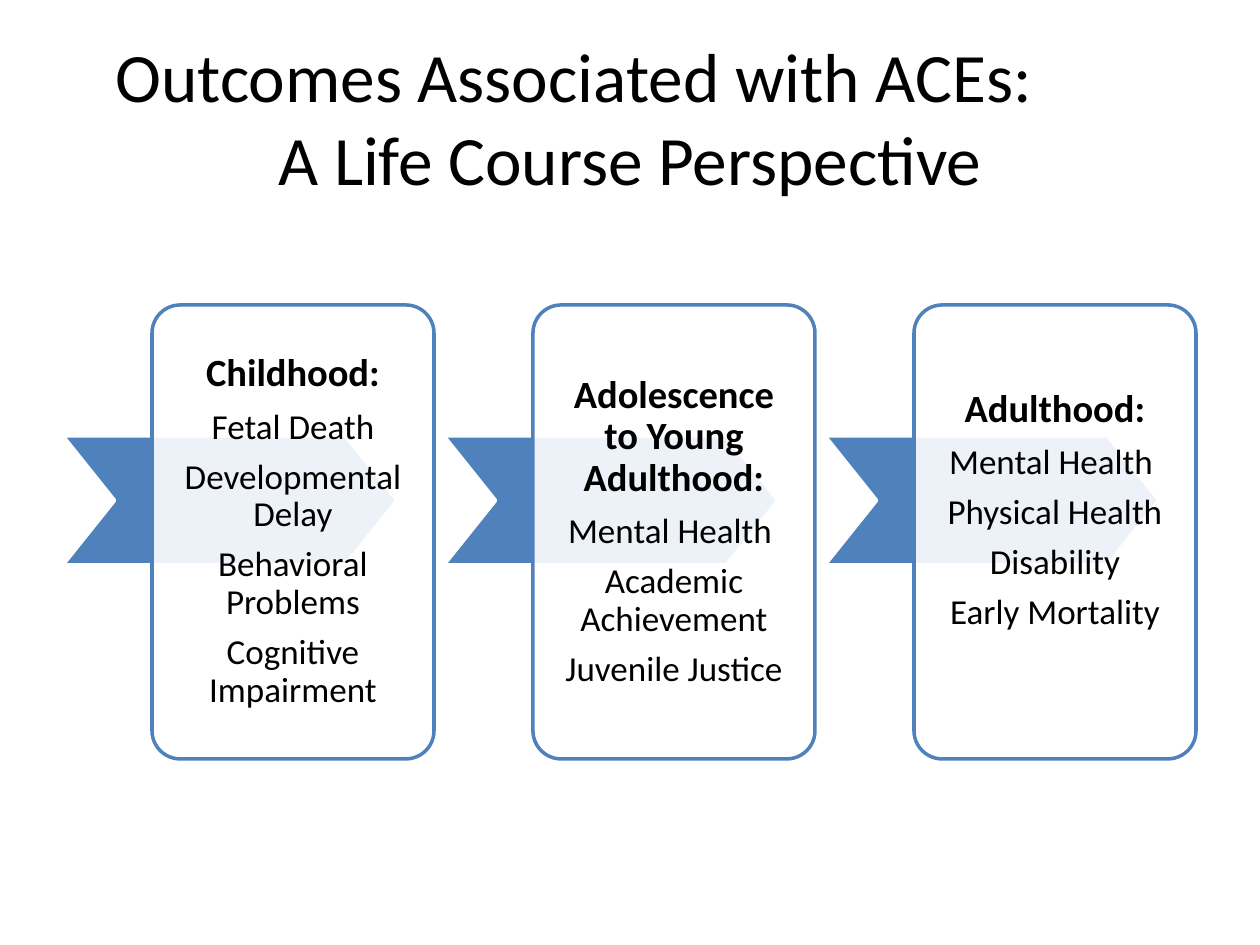
import dataclasses

import pptx
import pptx.dml.color
import pptx.enum.shapes
import pptx.enum.text
import pptx.oxml.ns
import pptx.util
from lxml import etree

SCALE = 914400 // 126  # EMU in one px


@dataclasses.dataclass(frozen=True)
class Theme:
    font: str = "Calibri"
    ink: str = "000000"
    paper: str = "FFFFFF"
    blue: str = "4F81BD"
    title: float = 39.6
    head: int = 22
    body: int = 20
    line: int = 2


THEME = Theme()
SHAPES = pptx.enum.shapes.MSO_SHAPE
STEP = 381
PAD = 21
STAGES = [
    (["Childhood:", "Fetal Death", "Developmental Delay",
      "Behavioral Problems", "Cognitive Impairment"], PAD),
    (["Adolescence to Young Adulthood:", "Mental Health ",
      "Academic Achievement", "Juvenile Justice"], PAD),
    (["Adulthood:", "Mental Health ", "Physical Health",
      "Disability", "Early Mortality"], PAD + 43),
]


def px(count):
    return pptx.util.Emu(count * SCALE)


def color(code):
    return pptx.dml.color.RGBColor.from_string(code)


def style(para, size, bold=False):
    para.alignment = pptx.enum.text.PP_ALIGN.CENTER
    for run in para.runs:
        font = run.font
        font.name, font.size, font.bold = THEME.font, pptx.util.Pt(size), bold
        font.color.rgb = color(THEME.ink)


def inset(frame, left, top, right, bottom):
    frame.margin_left, frame.margin_top = px(left), px(top)
    frame.margin_right, frame.margin_bottom = px(right), px(bottom)
    frame.vertical_anchor = pptx.enum.text.MSO_ANCHOR.MIDDLE
    frame.word_wrap = True


def add_title(slide):
    """Centre the first line a little to the left of the second."""
    title = slide.shapes.title
    title.left, title.top, title.width, title.height = map(px, (63, 38, 1134, 157))
    shift = 112
    frame = title.text_frame
    frame.text = "Outcomes Associated with ACEs:\nA Life Course Perspective"
    frame.auto_size = pptx.enum.text.MSO_AUTO_SIZE.NONE
    inset(frame, 13, 6, 13 + shift, 6)
    for para in frame.paragraphs:
        style(para, THEME.title)
        para.space_before = pptx.util.Pt(0)
    frame.paragraphs[1]._p.get_or_add_pPr().set("marL", str(px(shift)))


def add_block(slide, kind, box, adjust, fill, line):
    block = slide.shapes.add_shape(kind, *map(px, box))
    block.adjustments[0] = adjust
    block.shadow.inherit = False
    block.fill.solid()
    block.fill.fore_color.rgb = color(fill)
    block.line.color.rgb = color(line)
    block.line.width = pptx.util.Pt(THEME.line)
    return block


def fade(shape, percent):
    """Set the opacity of a solid fill."""
    qn = pptx.oxml.ns.qn
    tint = shape._element.spPr.find(qn("a:solidFill")).find(qn("a:srgbClr"))
    etree.SubElement(tint, qn("a:alpha")).set("val", str(percent * 1000))


def add_stage(slide, left, lines, foot):
    add_block(slide, SHAPES.CHEVRON, (left, 436, 334, 129), 0.4,
              THEME.blue, THEME.paper)
    card = add_block(slide, SHAPES.ROUNDED_RECTANGLE, (left + 89, 305, 282, 454),
                     0.1, THEME.paper, THEME.blue)
    fade(card, 90)
    frame = card.text_frame
    frame.text = "\n".join(lines)
    inset(frame, PAD, PAD, PAD, foot)
    for index, para in enumerate(frame.paragraphs):
        size = THEME.body if index else THEME.head
        style(para, size, bold=index == 0)
        para.line_spacing = 0.9
        para.space_after = pptx.util.Pt(round(size * 0.35, 1))


def main():
    deck = pptx.Presentation()
    deck.slide_width, deck.slide_height = px(1260), px(945)
    slide = deck.slides.add_slide(deck.slide_layouts[5])
    add_title(slide)
    for index, (lines, foot) in enumerate(STAGES):
        add_stage(slide, 63 + index * STEP, lines, foot)
    deck.save("out.pptx")


if __name__ == "__main__":
    main()
